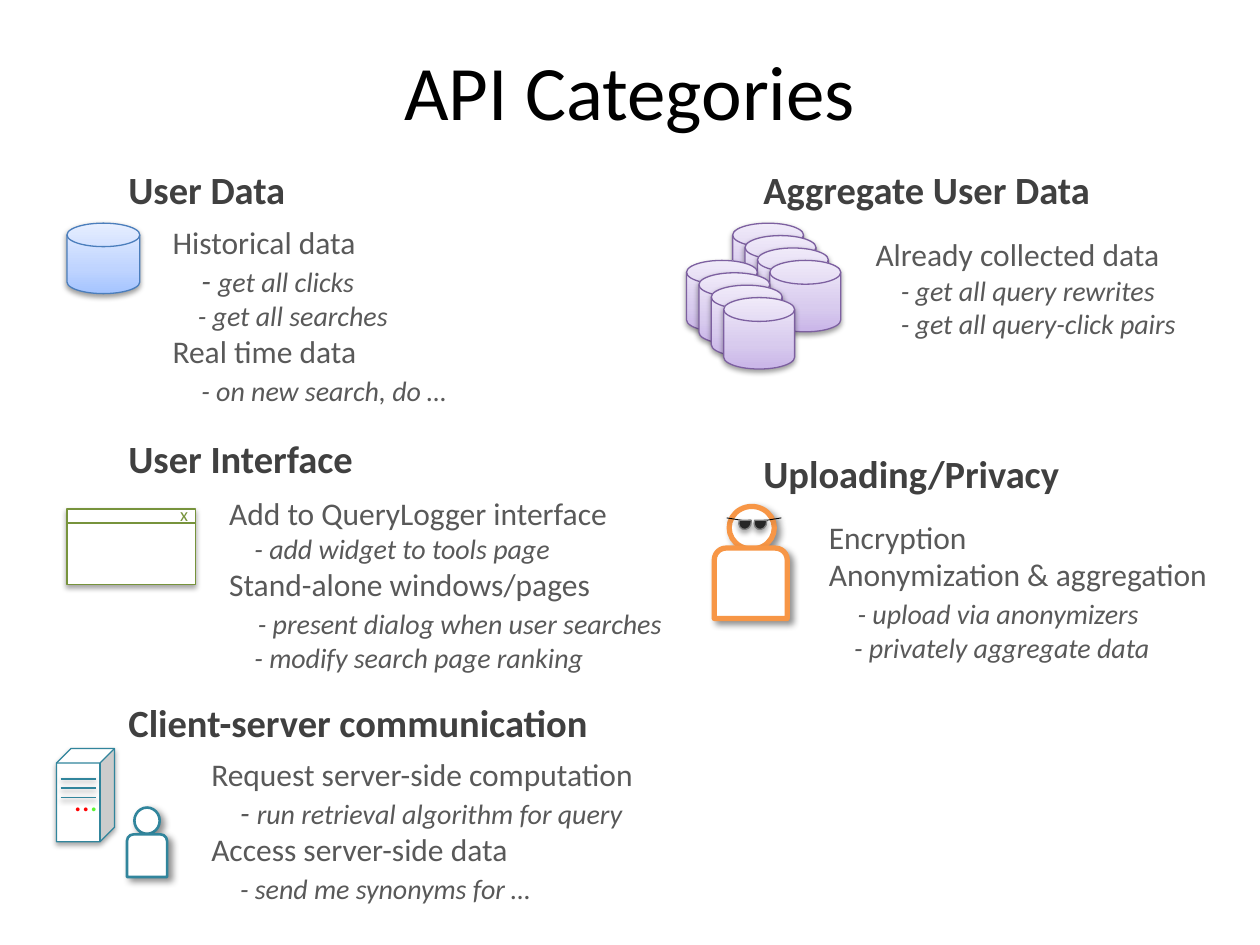
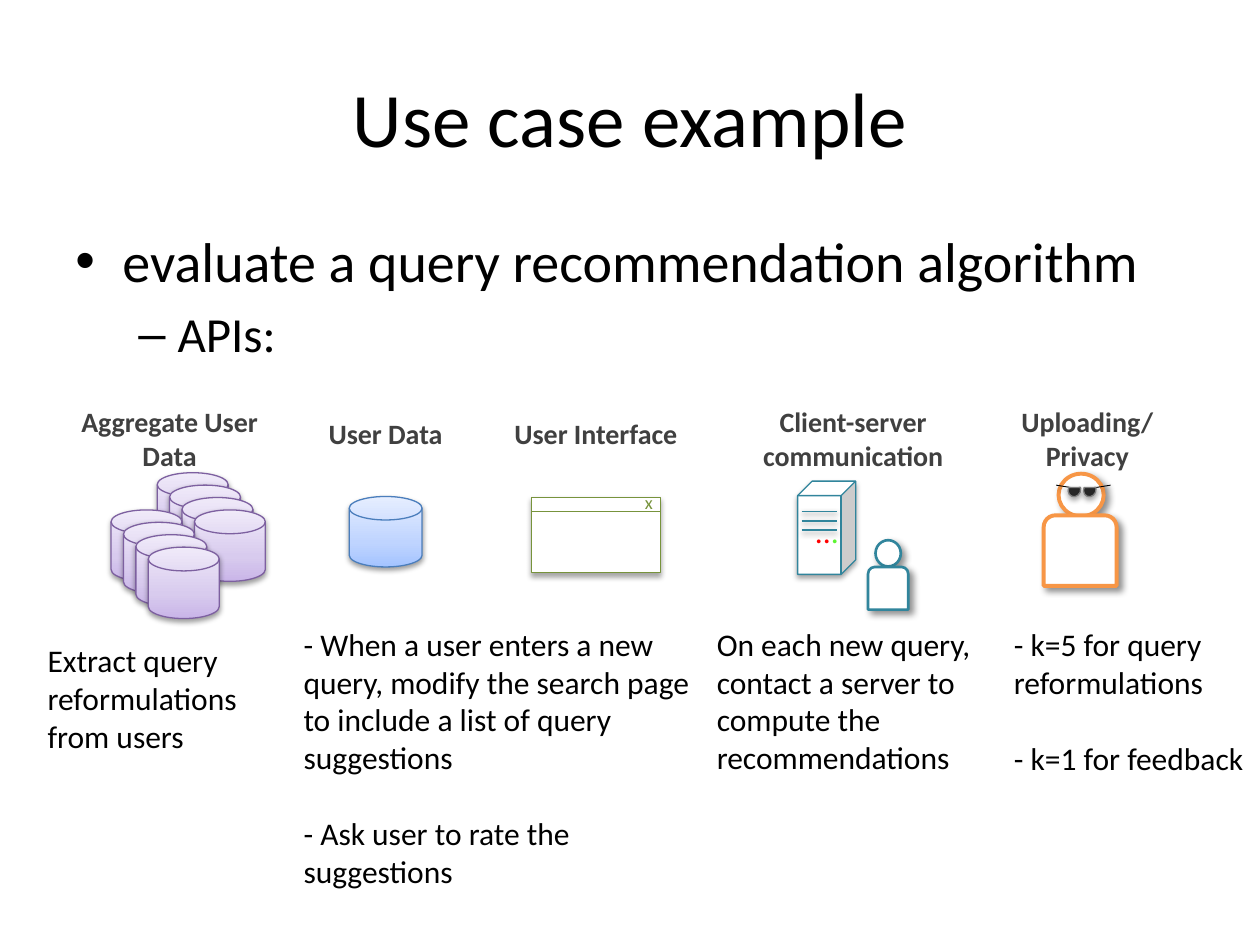
"""Build two slides on API categories and a use case that combines them."""
from copy import deepcopy

from lxml import etree
from pptx import Presentation
from pptx.dml.color import RGBColor
from pptx.enum.shapes import MSO_CONNECTOR, MSO_SHAPE
from pptx.enum.text import MSO_ANCHOR, PP_ALIGN
from pptx.oxml.ns import qn
from pptx.util import Cm, Pt

DISK = MSO_SHAPE.FLOWCHART_MAGNETIC_DISK
RECTANGLE = MSO_SHAPE.RECTANGLE
OVAL = MSO_SHAPE.OVAL
TORSO = MSO_SHAPE.ROUND_2_SAME_RECTANGLE
CHORD = MSO_SHAPE.CHORD
CUBE = MSO_SHAPE.CUBE
LINE = MSO_CONNECTOR.STRAIGHT
TOP, MIDDLE = MSO_ANCHOR.TOP, MSO_ANCHOR.MIDDLE
LEFT, CENTER = PP_ALIGN.LEFT, PP_ALIGN.CENTER

BLACK, WHITE, HEADING, BODY = "000000", "FFFFFF", "404040", "595959"
GREEN, ORANGE, TEAL = "77933C", "F79646", "31859C"
BLUES = [(0, "A4C4FF"), (0.35, "BFD4FF"), (1, "E6EEFF")]
PURPLES = [(0, "C9B5E8"), (0.35, "D8CBEE"), (1, "F0EAF9")]
SOFT = {"alpha": 38, "blur": 3.1, "distance": 1.6, "angle": 90}
FIRM = {"alpha": 35, "blur": 3.1, "distance": 1.8, "angle": 90}
SLANTED = {"alpha": 43, "blur": 4, "distance": 3, "angle": 45}

THEME = {
    "font": "Calibri",
    "text": {
        "title": {"size": 44, "color": BLACK, "align": CENTER},
        "point": {"size": 32, "color": BLACK, "before": 6.4,
                  "bullet": "•", "indent": 0.95, "hang": 0.95},
        "subpoint": {"size": 28, "color": BLACK, "before": 5.6,
                     "bullet": "–", "indent": 2.06, "hang": 0.79},
        "heading": {"size": 22, "color": HEADING, "bold": True},
        "label": {"size": 16, "color": HEADING, "bold": True, "align": CENTER},
        "topic": {"size": 18, "color": BODY},
        "lead": {"size": 16, "color": BODY, "italic": True, "indent": 0.58, "first_size": 18},
        "loose": {"size": 16, "color": BODY, "italic": True, "indent": 0.58, "before": 2},
        "tight": {"size": 16, "color": BODY, "italic": True, "indent": 0.51},
        "note": {"size": 18, "color": BLACK},
        "later note": {"size": 18, "color": BLACK, "before": 22},
        "close mark": {"size": 10.5, "color": GREEN},
        "lights": {"size": 18, "color": "FF0000", "last_color": "5CF531"},
    },
    "shape": {
        "user data": (BLUES, "4B7EBC", 0.75, SOFT),
        "aggregate": (PURPLES, "7D60A0", 0.75, SOFT),
        "window": (WHITE, GREEN, 0.75, FIRM),
        "window bar": (None, GREEN, 1, None),
        "bold agent": (WHITE, ORANGE, 3, SLANTED),
        "fine agent": (WHITE, ORANGE, 2.25, SLANTED),
        "temple": (None, BLACK, 0.5, SOFT),
        "lens": ("262626", "808080", 0.75, FIRM),
        "client": (WHITE, TEAL, 1.5, SLANTED),
        "server": (WHITE, TEAL, 0.75, FIRM),
        "slot": (None, TEAL, 1, SOFT),
    },
}

ICONS = {
    "disk": [(DISK, "user data", 0, 0, 1.47, 1.42)],
    "stack": [(DISK, "aggregate", left + 0.25 * step, top + 0.25 * step, 1.43, 1.44)
              for left, top in ((0.93, 0), (0, 0.75)) for step in range(4)],
    "window": [(RECTANGLE, "window", 0, 0, 2.59, 1.52),
               (LINE, "window bar", 0, 0.28, 2.59, 0)],
    "server": [(OVAL, "client", 1.57, 1.19, 0.51, 0.53),
               (TORSO, "client", 1.42, 1.73, 0.81, 0.86),
               (CUBE, "server", 0, 0, 1.17, 1.88)]
              + [(LINE, "slot", 0.08, 0.61 + 0.19 * row, 0.71, 0) for row in range(3)],
}
for agent in ("bold agent", "fine agent"):
    ICONS[agent] = [(OVAL, agent, 0.3, 0, 0.91, 0.86),
                    (TORSO, agent, 0, 0.84, 1.47, 1.42),
                    (LINE, "temple", 1.04, 0.28, 0.31, -0.05),
                    (LINE, "temple", 0.56, 0.28, -0.31, -0.05),
                    (CHORD, "lens", 0.48, 0.2, 0.28, 0.25),
                    (CHORD, "lens", 0.79, 0.2, 0.28, 0.25)]
ICON_MARKS = {
    "window": (2.03, -0.25, 0.86, 0.74, ("close mark", "x")),
    "server": (0.1, 0.5, 1.09, 1.02, ("lights", "..", ".")),
}


def add_text(page, place, lines, anchor=TOP):
    box = page.shapes.add_textbox(*map(Cm, place))
    frame = box.text_frame
    frame.word_wrap = True
    frame.vertical_anchor = anchor
    for index, (style_name, *spans) in enumerate(lines):
        style = THEME["text"][style_name]
        para = frame.add_paragraph() if index else frame.paragraphs[0]
        para.alignment = style.get("align", LEFT)
        para.space_before = Pt(style.get("before", 0))
        properties = para._p.get_or_add_pPr()
        properties.set("marL", str(Cm(style.get("indent", 0))))
        properties.set("indent", str(-Cm(style.get("hang", 0))))
        if "bullet" in style:
            etree.SubElement(properties, qn("a:buFont"), typeface="Arial")
            etree.SubElement(properties, qn("a:buChar"), char=style["bullet"])
        para.font.name = THEME["font"]
        para.font.size = Pt(style["size"])
        para.font.bold = style.get("bold", False)
        para.font.italic = style.get("italic", False)
        para.font.color.rgb = RGBColor.from_string(style["color"])
        for text in spans:
            span = para.add_run()
            span.text = text
        if "first_size" in style:
            para.runs[0].font.size = Pt(style["first_size"])
        if "last_color" in style:
            para.runs[-1].font.color.rgb = RGBColor.from_string(style["last_color"])


def add_icon(page, name, left, top):
    for kind, style_name, x, y, width, height in ICONS[name]:
        fill, line_color, weight, shadow = THEME["shape"][style_name]
        x, y = left + x, top + y
        if kind is LINE:
            part = page.shapes.add_connector(kind, Cm(x), Cm(y), Cm(x + width), Cm(y + height))
        else:
            part = page.shapes.add_shape(kind, Cm(x), Cm(y), Cm(width), Cm(height))
            part.rotation = 292.5 if kind is CHORD else 0
            if isinstance(fill, str):
                part.fill.solid()
                part.fill.fore_color.rgb = RGBColor.from_string(fill)
            else:
                part.fill.gradient()
                part.fill.gradient_angle = 90
                stops = part._element.spPr.find(".//" + qn("a:gsLst"))
                stops.insert(1, deepcopy(stops[0]))
                for stop, (position, color) in zip(part.fill.gradient_stops, fill):
                    stop.position = position
                    stop.color.rgb = RGBColor.from_string(color)
        part.line.color.rgb = RGBColor.from_string(line_color)
        part.line.width = Pt(weight)
        effects = etree.SubElement(part._element.spPr, qn("a:effectLst"))
        if shadow:
            outer = etree.SubElement(
                effects, qn("a:outerShdw"), blurRad=str(Pt(shadow["blur"])),
                dist=str(Pt(shadow["distance"])), dir=str(shadow["angle"] * 60000),
                rotWithShape="0")
            tone = etree.SubElement(outer, qn("a:srgbClr"), val=BLACK)
            etree.SubElement(tone, qn("a:alpha"), val=str(shadow["alpha"] * 1000))
    if name in ICON_MARKS:
        x, y, width, height, mark = ICON_MARKS[name]
        add_text(page, (left + x, top + y, width, height), [mark])


deck = Presentation()
deck.slide_width, deck.slide_height = Cm(25.4), Cm(19.05)
pages = []
for title, anchor in (("API Categories", TOP), ("Use case example", MIDDLE)):
    page = deck.slides.add_slide(deck.slide_layouts[6])
    add_text(page, (1.27, 0.76, 22.86, 3.18), [("title", title)], anchor)
    pages.append(page)
categories_page, example_page = pages

categories = [
    ("User Data", (2.34, 3.23, 4.8, 1.19), "disk", (1.35, 4.5), (3.23, 4.37, 7.24, 4.11), [
        ("topic", "Historical data"),
        ("lead", "- ", "get all clicks"),
        ("tight", "- get all searches"),
        ("topic", "Real time data"),
        ("loose", "- on new search, do …")]),
    ("Aggregate User Data", (15.14, 3.23, 7.92, 1.19), "stack", (13.84, 4.5),
     (17.4, 4.62, 7.24, 2.39), [
        ("topic", "Already collected data"),
        ("tight", "- get all query rewrites"),
        ("tight", "- get all query-click pairs")]),
    ("User Interface", (2.34, 8.64, 6.83, 1.19), "window", (1.35, 10.26),
     (4.37, 9.83, 9.47, 4.01), [
        ("topic", "Add to QueryLogger interface"),
        ("tight", "- add widget to tools page"),
        ("topic", "Stand-alone windows/pages"),
        ("loose", "- present dialog when user searches"),
        ("tight", "- modify search page ranking")]),
    ("Uploading/Privacy", (15.14, 8.94, 7.19, 1.19), "bold agent", (14.4, 10.21),
     (16.46, 10.31, 8.18, 3.25), [
        ("topic", "Encryption"),
        ("topic", "Anonymization & aggregation"),
        ("loose", "- upload via anonymizers"),
        ("tight", "- privately aggregate data")]),
    ("Client-server communication", (2.34, 13.97, 10.69, 1.19), "server", (1.14, 15.09),
     (4.01, 15.09, 11.86, 3.33), [
        ("topic", "Request server-side computation"),
        ("lead", "- ", "run retrieval algorithm for query"),
        ("topic", "Access server-side data"),
        ("loose", "- send me synonyms for …")]),
]
for heading, heading_place, icon, icon_place, detail_place, details in categories:
    add_text(categories_page, heading_place, [("heading", heading)])
    add_icon(categories_page, icon, *icon_place)
    add_text(categories_page, detail_place, details)

add_text(example_page, (1.27, 4.45, 22.86, 4.29), [
    ("point", "evaluate a query recommendation algorithm"),
    ("subpoint", "APIs:")])

apis = [
    ("Aggregate User Data", (0.84, 8.03, 5.16, 1.63), "stack", (2.24, 9.53)),
    ("User Data", (5.87, 8.28, 3.81, 0.94), "disk", (7.04, 10.01)),
    ("User Interface", (10.11, 8.28, 3.81, 0.94), "window", (10.72, 10.03)),
    ("Client-server communication", (14.94, 8.03, 4.52, 1.63), "server", (16.08, 9.7)),
    ("Uploading/Privacy", (19.66, 8.03, 4.52, 1.63), "fine agent", (21.04, 9.55)),
]
for label, label_place, icon, icon_place in apis:
    add_icon(example_page, icon, *icon_place)
    add_text(example_page, label_place, [("label", label)])

notes = [
    ((0.71, 12.8, 5.16, 2.57), [
        ("note", "Extract query"), ("note", "reformulations"), ("note", "from users")]),
    ((5.87, 12.47, 8.33, 5.64), [
        ("note", "- When a user enters a new query, modify the search page "
                 "to include a list of query suggestions"),
        ("later note", "- Ask user to rate the suggestions")]),
    ((14.2, 12.47, 6.1, 3.33), [
        ("note", "On each new query, contact a server to compute the recommendations")]),
    ((20.19, 12.47, 5.51, 4.11), [
        ("note", "- k=5 for query reformulations"),
        ("later note", "- k=1 for feedback")]),
]
for place, lines in notes:
    add_text(example_page, place, lines)

deck.save("out.pptx")
